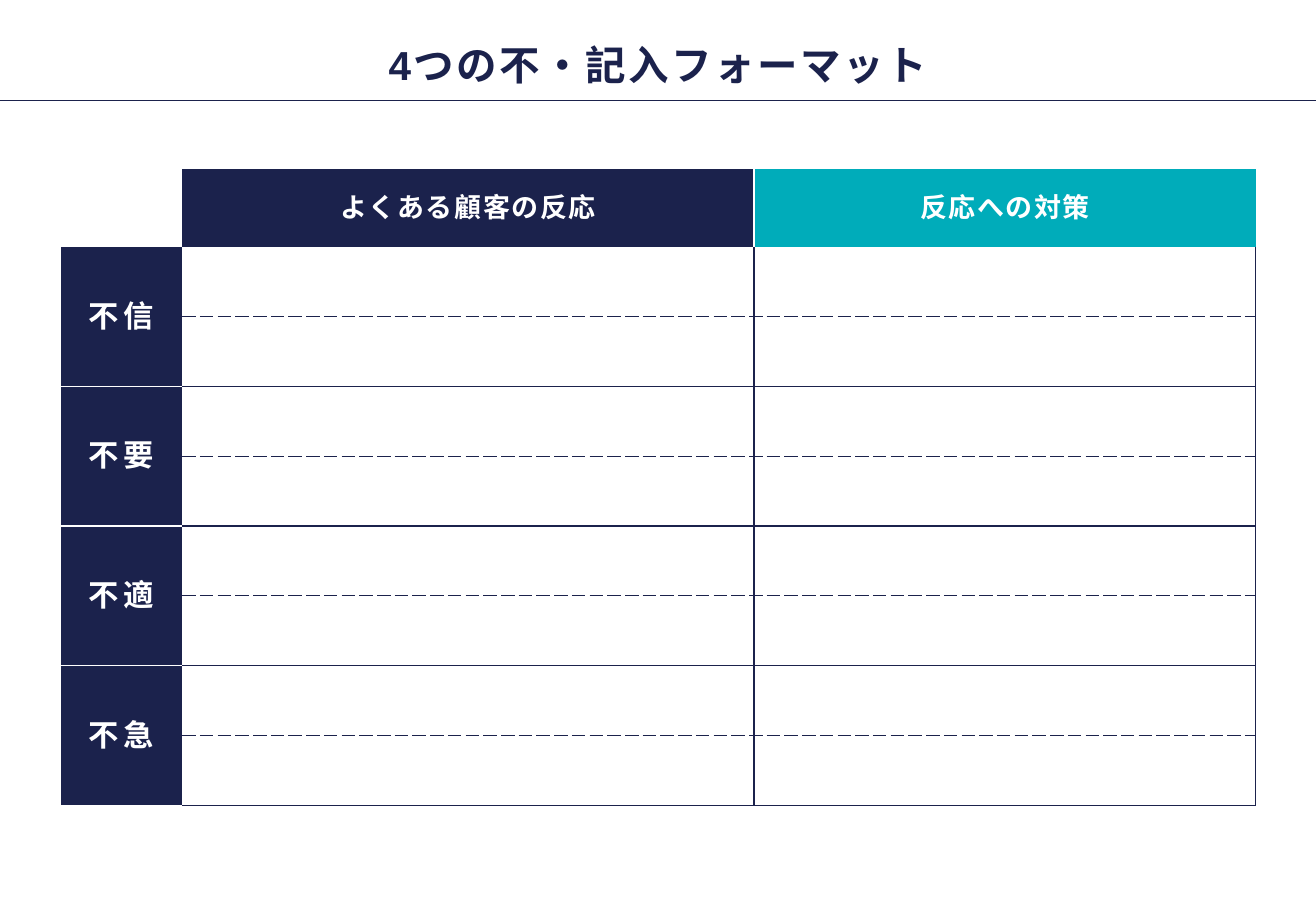
"""Build the blank worksheet for the four kinds of customer doubt."""
from lxml import etree
from pptx import Presentation
from pptx import util as u
from pptx.dml import color
from pptx.enum import shapes, text
from pptx.oxml import ns

NAVY, TEAL, WHITE = "1B224C", "00ACBA", "FFFFFF"
HEADS = [("よくある顧客の反応", NAVY), ("反応への対策", TEAL)]
LABELS = ["不信", "不要", "不適", "不急"]
COLS = [2.54, 11.96, 10.49]
PLAIN = "{2D5ABB26-0587-4C30-8999-92F81FD0307C}"


def rgb(code):
    return color.RGBColor.from_string(code)


def sub(node, tag, **attrs):
    return etree.SubElement(node, ns.qn(tag), **attrs)


class Sheet:
    def __init__(self, deck, font):
        self.font = font
        self.slide = deck.slides.add_slide(deck.slide_layouts[5])

    def words(self, frame, words, size, ink, gap):
        para = frame.paragraphs[0]
        para.alignment = text.PP_ALIGN.CENTER
        run = para.add_run()
        run.text = words
        run.font.name = self.font
        run.font.size = u.Pt(size)
        run.font.bold = True
        run.font.color.rgb = rgb(ink)
        props = run.font._element
        props.set("spc", str(int(gap * 100)))
        sub(props, "a:ea", typeface=self.font)
        return para

    def title(self, words, x, y, w, h):
        box = self.slide.shapes.title
        box.left, box.top, box.width, box.height = map(u.Cm, (x, y, w, h))
        frame = box.text_frame
        frame.word_wrap = False
        frame.auto_size = text.MSO_AUTO_SIZE.NONE
        frame.vertical_anchor = text.MSO_ANCHOR.MIDDLE
        frame.margin_left = frame.margin_right = u.Cm(0.1)
        frame.margin_top = frame.margin_bottom = u.Cm(0.1)
        self.words(frame, words, 24, NAVY, 1.5).line_spacing = 1.5

    def rule(self, x1, y1, x2, y2):
        line = self.slide.shapes.add_connector(
            shapes.MSO_CONNECTOR.STRAIGHT, *map(u.Cm, (x1, y1, x2, y2)))
        line.line.color.rgb = rgb(NAVY)
        line.line.width = u.Pt(1)
        sub(line._element.spPr, "a:effectLst")

    def table(self, x, y, cols, rows):
        frame = self.slide.shapes.add_table(
            len(rows), len(cols), *map(u.Cm, (x, y, sum(cols), sum(rows))))
        grid = frame.table
        grid.first_row = grid.horz_banding = False
        grid._tbl.tblPr.find(ns.qn("a:tableStyleId")).text = PLAIN
        for col, width in zip(grid.columns, cols):
            col.width = u.Cm(width)
        for row, height in zip(grid.rows, rows):
            row.height = u.Cm(height)
        return grid

    def cell(self, cell, fill, edges):
        props = cell._tc.get_or_add_tcPr()
        for side in "LRTB":
            if side in edges:
                ink, width, dash = edges[side]
                line = sub(props, f"a:ln{side}", w=str(u.Pt(width)))
                sub(sub(line, "a:solidFill"), "a:srgbClr", val=ink)
                sub(line, "a:prstDash", val=dash)
        cell.fill.solid()
        cell.fill.fore_color.rgb = rgb(fill)

    def label(self, cell, words, size, gap, side, top):
        cell.vertical_anchor = text.MSO_ANCHOR.MIDDLE
        cell.margin_left = cell.margin_right = u.Cm(side)
        cell.margin_top = cell.margin_bottom = u.Cm(top)
        self.words(cell.text_frame, words, size, WHITE, gap)


def main():
    deck = Presentation()
    deck.slide_width, deck.slide_height = u.Cm(27.52), u.Cm(19.05)
    sheet = Sheet(deck, "Arial")
    sheet.rule(0, 2.1, 27.52, 2.1)
    sheet.title("4つの不・記入フォーマット", 1.27, 0.43, 24.98, 1.32)

    navy, white = (NAVY, 1, "solid"), (WHITE, 1, "solid")
    dash = (NAVY, 0.5, "lgDash")
    grid = sheet.table(1.27, 3.54, COLS, [1.62] + [1.46] * 2 * len(LABELS))

    for col, (words, fill) in enumerate(HEADS, 1):
        head = grid.cell(0, col)
        sheet.cell(head, fill, {"R": white} if col == 1 else {"L": white})
        sheet.label(head, words, 16, 1, 0.3, 0.4)

    for i, words in enumerate(LABELS):
        top = 1 + 2 * i
        low = {"B": white} if i < len(LABELS) - 1 else {}
        high = {"T": white} if i else {}
        sheet.cell(grid.cell(top, 0), NAVY, high | low)
        sheet.cell(grid.cell(top + 1, 0), NAVY, low)
        grid.cell(top, 0).merge(grid.cell(top + 1, 0))
        sheet.label(grid.cell(top, 0), words, 18, 3, 0.2, 0.2)
        for col in (1, 2):
            side = {"R": navy} if col == 1 else {"L": navy, "R": navy}
            above = {"T": navy} if i else {}
            sheet.cell(grid.cell(top, col), WHITE, side | above | {"B": dash})
            sheet.cell(grid.cell(top + 1, col), WHITE,
                       side | {"T": dash, "B": navy})

    deck.save("out.pptx")


if __name__ == "__main__":
    main()
